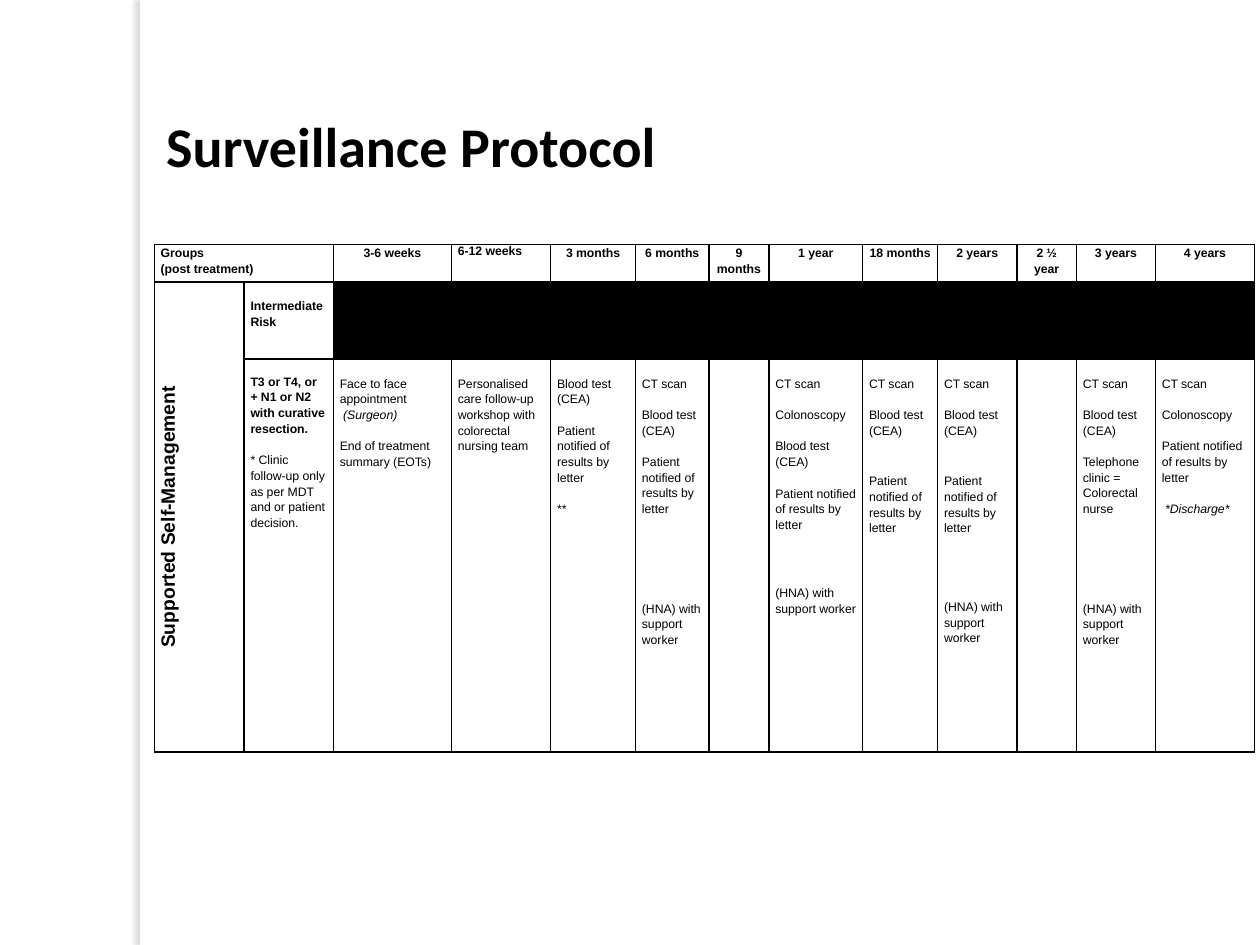
from lxml import etree
from pptx import Presentation
from pptx.dml.color import RGBColor
from pptx.enum.shapes import MSO_SHAPE
from pptx.enum.text import MSO_ANCHOR, PP_ALIGN
from pptx.oxml.ns import qn
from pptx.util import Cm, Pt

BLACK = RGBColor(0x00, 0x00, 0x00)
WHITE = RGBColor(0xFF, 0xFF, 0xFF)
SHADOW = RGBColor(0x73, 0x6F, 0x63)
CENTER, LEFT = PP_ALIGN.CENTER, PP_ALIGN.LEFT
MIDDLE = MSO_ANCHOR.MIDDLE
RECTANGLE = MSO_SHAPE.RECTANGLE

BODY = {"name": "Arial", "size": Pt(7), "bold": False}
BOLD = {**BODY, "bold": True}
ITALIC = {**BODY, "italic": True}
SIDE = {**BOLD, "size": Pt(11)}
TITLE = {"name": "Calibri", "size": Pt(32), "bold": True}

LINE = 9  # height of one text line in points
COLUMN_WIDTHS = [1.81, 1.8, 2.38, 2, 1.71, 1.48, 1.21, 1.89, 1.51, 1.6, 1.2, 1.59, 2]
ROW_HEIGHTS = [0.75, 1.56, 7.92]

BLOOD = "Blood test (CEA)"
LETTER = "Patient notified of results by letter"
HNA = "(HNA) with support worker"

# Heading, then (space before in points, text, format) per paragraph
VISITS = [
    ("3-6 weeks", [(0, "Face to face appointment", BODY), (0, " (Surgeon)", ITALIC),
                   (LINE, "End of treatment summary (EOTs)", BODY)]),
    ("6-12 weeks", [(0, "Personalised care follow-up workshop with colorectal nursing team", BODY)]),
    ("3 months", [(0, BLOOD, BODY), (LINE, LETTER, BODY), (LINE, "**", BODY)]),
    ("6 months", [(0, "CT scan", BODY), (LINE, BLOOD, BODY), (LINE, LETTER, BODY), (48, HNA, BODY)]),
    ("9 months", []),
    ("1 year", [(0, "CT scan", BODY), (LINE, "Colonoscopy", BODY), (LINE, BLOOD, BODY),
                (LINE, LETTER, BODY), (30, HNA, BODY)]),
    ("18 months", [(0, "CT scan", BODY), (LINE, BLOOD, BODY), (20, LETTER, BODY)]),
    ("2 years", [(0, "CT scan", BODY), (LINE, BLOOD, BODY), (20, LETTER, BODY), (36, HNA, BODY)]),
    ("2 ½ year", []),
    ("3 years", [(0, "CT scan", BODY), (LINE, BLOOD, BODY),
                 (LINE, "Telephone clinic = Colorectal nurse", BODY), (48, HNA, BODY)]),
    ("4 years", [(0, "CT scan", BODY), (LINE, "Colonoscopy", BODY), (LINE, LETTER, BODY),
                 (LINE, " *Discharge*", ITALIC)]),
]
FIRST_VISIT = 2  # column of the first visit
RISK = [(0, "Intermediate Risk", BOLD)]
CRITERIA = [(0, "T3 or T4, or + N1 or N2 with curative resection.", BOLD),
            (LINE, "* Clinic follow-up only as per MDT and or patient decision.", BODY)]


def add_run(p, text, values):
    r = p.add_run()
    r.text = text
    r.font.color.rgb = BLACK
    for name, value in values.items():
        setattr(r.font, name, value)


def write_cell(cell, paragraphs, align=LEFT, top=0, spacing=1.15):
    """Fill a cell with (space before, text, format) paragraphs below a top margin in points."""
    cell.margin_top = Pt(top)
    tf = cell.text_frame
    for i, (before, text, values) in enumerate(paragraphs):
        p = tf.add_paragraph() if i else tf.paragraphs[0]
        p.alignment = align
        p.line_spacing = spacing
        p.space_before = Pt(before)
        add_run(p, text, values)


def add_borders(cell):
    tcPr = cell._tc.get_or_add_tcPr()
    for side in ("a:lnL", "a:lnR", "a:lnT", "a:lnB"):
        ln = etree.SubElement(tcPr, qn(side), w=str(Pt(1)))
        fill = etree.SubElement(ln, qn("a:solidFill"))
        etree.SubElement(fill, qn("a:srgbClr"), val=str(BLACK))


def add_side_panel(s):
    """White strip with a soft shadow to its left."""
    sp = s.shapes.add_shape(RECTANGLE, Cm(2.82), 0, Cm(0.2), Cm(19.05))
    sp.fill.solid()
    sp.fill.fore_color.rgb = WHITE
    sp.line.fill.background()
    sp.shadow.inherit = False
    effects = sp._element.spPr.find(qn("a:effectLst"))
    shadow = etree.SubElement(effects, qn("a:outerShdw"), blurRad=str(Pt(3)), dist=str(Pt(3)),
                              dir="10800000", algn="tl", rotWithShape="0")
    color = etree.SubElement(shadow, qn("a:srgbClr"), val=str(SHADOW))
    etree.SubElement(color, qn("a:alpha"), val="25000")


def add_title(s):
    tf = s.shapes.add_textbox(Cm(3.1), Cm(2.13), Cm(12), Cm(1.63)).text_frame
    tf.word_wrap = True
    add_run(tf.paragraphs[0], "Surveillance Protocol", TITLE)


def add_grid(s):
    """Empty bordered table with its cells merged and the risk band filled."""
    table = s.shapes.add_table(len(ROW_HEIGHTS), len(COLUMN_WIDTHS), Cm(3.11), Cm(4.93),
                               Cm(sum(COLUMN_WIDTHS)), Cm(sum(ROW_HEIGHTS))).table
    table.first_row = table.horz_banding = False
    for column, width in zip(table.columns, COLUMN_WIDTHS):
        column.width = Cm(width)
    for i, height in enumerate(ROW_HEIGHTS):
        table.rows[i].height = Cm(height)
        for j in range(len(COLUMN_WIDTHS)):
            cell = table.cell(i, j)
            cell.margin_left = cell.margin_right = Cm(0.13)
            cell.margin_top = cell.margin_bottom = 0
            add_borders(cell)
            if i == 1 and j >= FIRST_VISIT:
                cell.fill.solid()
                cell.fill.fore_color.rgb = BLACK
            else:
                cell.fill.background()
    table.cell(0, 0).merge(table.cell(0, 1))
    table.cell(1, 0).merge(table.cell(2, 0))
    return table


def add_protocol_table(s):
    table = add_grid(s)
    write_cell(table.cell(0, 0), [(0, "Groups", BOLD), (0, "(post treatment)", BOLD)])
    side = table.cell(1, 0)
    write_cell(side, [(0, "Supported Self-Management", SIDE)], CENTER)
    side.vertical_anchor = MIDDLE
    side._tc.get_or_add_tcPr().set("vert", "vert270")
    write_cell(table.cell(1, 1), RISK, top=LINE)
    write_cell(table.cell(2, 1), CRITERIA, top=8)
    for j, (heading, paragraphs) in enumerate(VISITS, FIRST_VISIT):
        align, spacing = (LEFT, 1) if heading == "6-12 weeks" else (CENTER, 1.15)
        write_cell(table.cell(0, j), [(0, heading, BOLD)], align, spacing=spacing)
        write_cell(table.cell(2, j), paragraphs, top=LINE)


def main():
    prs = Presentation()
    prs.slide_width, prs.slide_height = Cm(25.4), Cm(19.05)
    s = prs.slides.add_slide(prs.slide_layouts[6])
    add_side_panel(s)
    add_title(s)
    add_protocol_table(s)
    prs.save("out.pptx")


if __name__ == "__main__":
    main()
